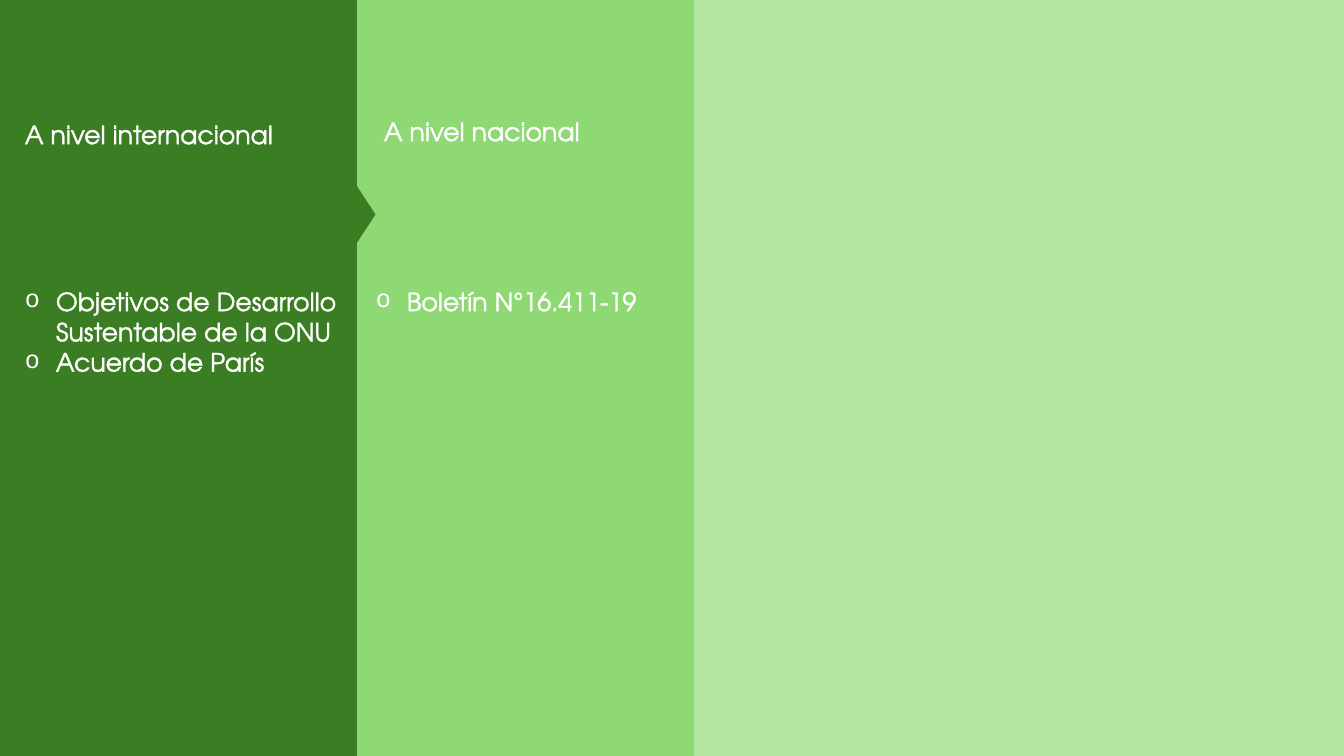
from lxml import etree
from pptx import Presentation
from pptx import util as u
from pptx.dml.color import RGBColor
from pptx.enum import shapes, text
from pptx.oxml.ns import qn

PX = 914400 / 100.8
WHITE = RGBColor(0xFF, 0xFF, 0xFF)
DARK = RGBColor(0x3B, 0x7D, 0x23)
MID = RGBColor(0x8E, 0xD9, 0x73)
PALE = RGBColor(0xB4, 0xE5, 0xA2)
FONT = "TeX Gyre Adventor"
INDENT = 31


def add_block(group, kind, box, color):
    sp = group.shapes.add_shape(kind, *[round(v * PX) for v in box])
    sp.shadow.inherit = False
    sp.fill.solid()
    sp.fill.fore_color.rgb = color
    sp.line.fill.background()
    return sp


def add_text(group, box, lines, align, bullet=False):
    tf = group.shapes.add_textbox(*[round(v * PX) for v in box]).text_frame
    tf.word_wrap = True
    tf.auto_size = text.MSO_AUTO_SIZE.SHAPE_TO_FIT_TEXT
    for i, line in enumerate(lines):
        p = tf.paragraphs[0] if i == 0 else tf.add_paragraph()
        p.alignment = align
        r = p.add_run()
        r.text = line
        for name, value in {"name": FONT, "size": u.Pt(18)}.items():
            setattr(r.font, name, value)
        r.font.color.rgb = WHITE
        # White letter outline
        ln = etree.Element(qn("a:ln"), w=str(u.Pt(1)))
        fill = etree.SubElement(ln, qn("a:solidFill"))
        etree.SubElement(fill, qn("a:srgbClr"), val=str(WHITE))
        r.font._element.insert(0, ln)
        if bullet:
            pPr = p._p.get_or_add_pPr()
            pPr.set("marL", str(round(INDENT * PX)))
            pPr.set("indent", str(round(-INDENT * PX)))
            etree.SubElement(pPr, qn("a:buFont"), typeface="Courier New")
            etree.SubElement(pPr, qn("a:buChar"), char="o")


prs = Presentation()
prs.slide_width, prs.slide_height = round(1344 * PX), round(756 * PX)
s = prs.slides.add_slide(prs.slide_layouts[6])
s.background.fill.solid()
s.background.fill.fore_color.rgb = PALE

# Columns, the national one behind the international one
LEFT, JUSTIFY = text.PP_ALIGN.LEFT, text.PP_ALIGN.JUSTIFY
columns = [
    (MID, (357, 0, 337, 756),
     "A nivel nacional", (374, 111, 268, 40),
     ["Boletín N°16.411-19"], (366, 281, 328, 40), JUSTIFY),
    (DARK, (0, 0, 357, 756),
     "A nivel internacional", (15, 114, 289, 40),
     ["Objetivos de Desarrollo Sustentable de la ONU", "Acuerdo de París"],
     (15, 281, 341, 102), LEFT),
]
for color, panel, title, title_box, items, items_box, align in columns:
    group = s.shapes.add_group_shape()
    add_block(group, shapes.MSO_SHAPE.RECTANGLE, panel, color)
    add_text(group, title_box, [title], LEFT)
    add_text(group, items_box, items, align, bullet=True)

# Pointer from the international column to the national one
pointer = add_block(group, shapes.MSO_SHAPE.ISOSCELES_TRIANGLE, (337, 205, 58, 19), DARK)
pointer.rotation = 90

prs.save("out.pptx")
